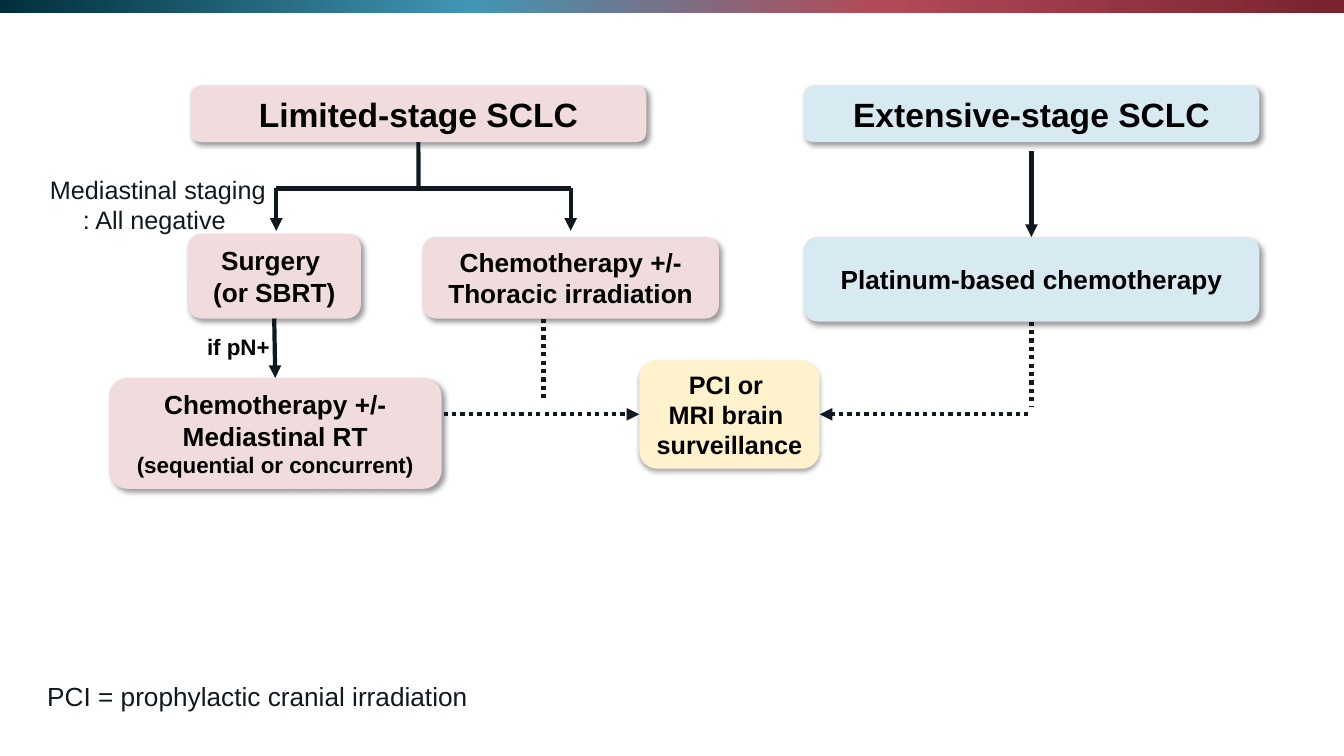
from dataclasses import dataclass

from lxml.etree import SubElement
from pptx import Presentation
from pptx.dml.color import RGBColor
from pptx.enum.dml import MSO_LINE
from pptx.enum.shapes import MSO_CONNECTOR, MSO_SHAPE
from pptx.enum.text import MSO_ANCHOR, PP_ALIGN
from pptx.oxml.ns import qn
from pptx.shapes.autoshape import Shape
from pptx.shapes.connector import Connector
from pptx.slide import Slide
from pptx.util import Inches, Pt


@dataclass(frozen=True)
class Theme:
    font: str = "Arial"
    ink: str = "101820"
    black: str = "000000"
    limited: str = "F0DBDD"
    extensive: str = "D8EAF1"
    surveillance: str = "FFF2CC"
    band: tuple[tuple[int, str], ...] = (
        (0, "002F3B"), (35, "4196B4"), (65, "B24B58"), (100, "79232E"))
    heading: float = 24
    body: float = 18.7
    label: float = 18
    small: float = 16
    line: float = 3


@dataclass(frozen=True)
class Shadow:
    opacity: int = 40
    blur: float = 4
    distance: float = 3
    angle: int = 45


@dataclass(frozen=True)
class Step:
    left: float
    top: float
    width: float
    height: float
    fill: str
    lines: tuple[tuple[str, float], ...]
    shadow: Shadow = Shadow()


@dataclass(frozen=True)
class Side:
    step: str
    site: int


@dataclass(frozen=True)
class Link:
    start: tuple[float, float] | Side
    end: tuple[float, float] | Side
    arrow: bool = True
    dotted: bool = False


THEME = Theme()
TOP, LEFT, BOTTOM, RIGHT = range(4)
BRANCH_Y, ARROW_Y, PATH_Y = 1.87, 2.29, 4.11
SURGERY_X, THORACIC_X, EXTENSIVE_X = 2.74, 5.66, 10.23

STEPS = {
    "limited": Step(1.89, 0.85, 4.52, 0.56, THEME.limited,
                    (("Limited-stage SCLC", THEME.heading),)),
    "extensive": Step(7.97, 0.85, 4.52, 0.56, THEME.extensive,
                      (("Extensive-stage SCLC", THEME.heading),)),
    "surgery": Step(1.86, 2.32, 1.72, 0.84, THEME.limited,
                    (("Surgery ", THEME.body), ("(or SBRT)", THEME.body))),
    "thoracic": Step(4.19, 2.35, 2.94, 0.81, THEME.limited,
                     (("Chemotherapy +/- Thoracic irradiation", THEME.body),)),
    "platinum": Step(7.97, 2.35, 4.52, 0.84, THEME.extensive,
                     (("Platinum-based chemotherapy", THEME.body),)),
    "mediastinal": Step(1.08, 3.75, 3.3, 1.1, THEME.limited,
                        (("Chemotherapy +/- Mediastinal RT", THEME.body),
                         ("(sequential or concurrent)", THEME.small))),
    "pci": Step(6.34, 3.57, 1.79, 1.08, THEME.surveillance,
                (("PCI or ", THEME.label), ("MRI brain ", THEME.label),
                 ("surveillance", THEME.label)), Shadow(32, 3.5, 2.2, 90)),
}

LINKS = (
    Link(Side("limited", BOTTOM), (4.15, BRANCH_Y), arrow=False),
    Link((SURGERY_X, BRANCH_Y), (THORACIC_X, BRANCH_Y), arrow=False),
    Link((SURGERY_X, BRANCH_Y), (SURGERY_X, ARROW_Y)),
    Link((THORACIC_X, BRANCH_Y), (THORACIC_X, ARROW_Y)),
    Link(Side("surgery", BOTTOM), Side("mediastinal", TOP)),
    Link((EXTENSIVE_X, 1.5), Side("platinum", TOP)),
    Link((5.39, 3.16), (5.39, 3.97), arrow=False, dotted=True),
    Link(Side("platinum", BOTTOM), (EXTENSIVE_X, 4.04), arrow=False, dotted=True),
    Link((4.4, PATH_Y), Side("pci", LEFT), dotted=True),
    Link((10.2, PATH_Y), Side("pci", RIGHT), dotted=True),
)


def write_text(shape: Shape, lines: tuple[tuple[str, float], ...], *,
               color: str = THEME.black, bold: bool = True,
               align: PP_ALIGN = PP_ALIGN.CENTER,
               anchor: MSO_ANCHOR = MSO_ANCHOR.MIDDLE,
               inset: float = 0.1, wrap: bool = True,
               spacing: float = 1.0) -> None:
    frame = shape.text_frame
    frame.word_wrap = wrap
    frame.vertical_anchor = anchor
    frame.margin_left = frame.margin_right = Inches(inset)
    for index, (text, size) in enumerate(lines):
        paragraph = frame.add_paragraph() if index else frame.paragraphs[0]
        paragraph.alignment = align
        paragraph.line_spacing = spacing
        run = paragraph.add_run()
        run.text = text
        run.font.name = THEME.font
        run.font.size = Pt(size)
        run.font.bold = bold
        run.font.color.rgb = RGBColor.from_string(color)


def add_shadow(shape: Shape, shadow: Shadow) -> None:
    shape.shadow.inherit = False
    effects = shape._element.spPr.find(qn("a:effectLst"))
    outer = SubElement(effects, qn("a:outerShdw"), blurRad=str(Pt(shadow.blur)),
                       dist=str(Pt(shadow.distance)),
                       dir=str(shadow.angle * 60000), rotWithShape="0")
    color = SubElement(outer, qn("a:srgbClr"), val=THEME.black)
    SubElement(color, qn("a:alpha"), val=str(shadow.opacity * 1000))


def add_band(slide: Slide, width: int) -> None:
    band = slide.shapes.add_shape(MSO_SHAPE.RECTANGLE, 0, 0, width, Inches(0.13))
    band.shadow.inherit = False
    band.line.fill.background()
    band.fill.gradient()
    band.fill.gradient_angle = 0
    stops = band._element.spPr.find(qn("a:gradFill")).find(qn("a:gsLst"))
    stops.clear()
    for position, color in THEME.band:
        stop = SubElement(stops, qn("a:gs"), pos=str(position * 1000))
        SubElement(stop, qn("a:srgbClr"), val=color)


def add_step(slide: Slide, step: Step) -> Shape:
    box = slide.shapes.add_shape(
        MSO_SHAPE.ROUNDED_RECTANGLE, Inches(step.left), Inches(step.top),
        Inches(step.width), Inches(step.height))
    box.fill.solid()
    box.fill.fore_color.rgb = RGBColor.from_string(step.fill)
    box.line.fill.background()
    add_shadow(box, step.shadow)
    write_text(box, step.lines, inset=0.05)
    return box


def add_link(slide: Slide, link: Link, boxes: dict[str, Shape]) -> Connector:
    start, end = ((0, 0) if isinstance(point, Side) else point
                  for point in (link.start, link.end))
    connector = slide.shapes.add_connector(
        MSO_CONNECTOR.STRAIGHT, *(Inches(value) for value in (*start, *end)))
    if isinstance(link.start, Side):
        connector.begin_connect(boxes[link.start.step], link.start.site)
    if isinstance(link.end, Side):
        connector.end_connect(boxes[link.end.step], link.end.site)
    connector.line.color.rgb = RGBColor.from_string(THEME.ink)
    connector.line.width = Pt(THEME.line)
    if link.dotted:
        connector.line.dash_style = MSO_LINE.ROUND_DOT
    properties = connector._element.spPr
    if link.arrow:
        SubElement(properties.find(qn("a:ln")), qn("a:tailEnd"), type="triangle")
    SubElement(properties, qn("a:effectLst"))
    return connector


def add_note(slide: Slide, left: float, top: float, width: float,
             height: float) -> Shape:
    return slide.shapes.add_textbox(
        Inches(left), Inches(top), Inches(width), Inches(height))


def main() -> None:
    deck = Presentation()
    deck.slide_width, deck.slide_height = Inches(13.33), Inches(7.5)
    slide = deck.slides.add_slide(deck.slide_layouts.get_by_name("Blank"))
    add_band(slide, deck.slide_width)

    # Treatment pathway
    boxes = {key: add_step(slide, step) for key, step in STEPS.items()}
    for link in LINKS:
        add_link(slide, link, boxes)

    # Conditions beside the arrows
    write_text(add_note(slide, 0.39, 1.68, 2.35, 0.71),
               (("Mediastinal staging", THEME.label),
                (": All negative ", THEME.label)),
               color=THEME.ink, bold=False, anchor=MSO_ANCHOR.TOP)
    write_text(add_note(slide, 1.95, 3.26, 0.83, 0.37),
               (("if pN+", THEME.small),), anchor=MSO_ANCHOR.TOP, wrap=False)

    # Abbreviation
    write_text(add_note(slide, 0.37, 6.69, 5.98, 0.47),
               (("PCI = prophylactic cranial irradiation", THEME.body),),
               color=THEME.ink, bold=False, align=PP_ALIGN.LEFT, spacing=0.9)

    deck.save("out.pptx")


if __name__ == "__main__":
    main()
